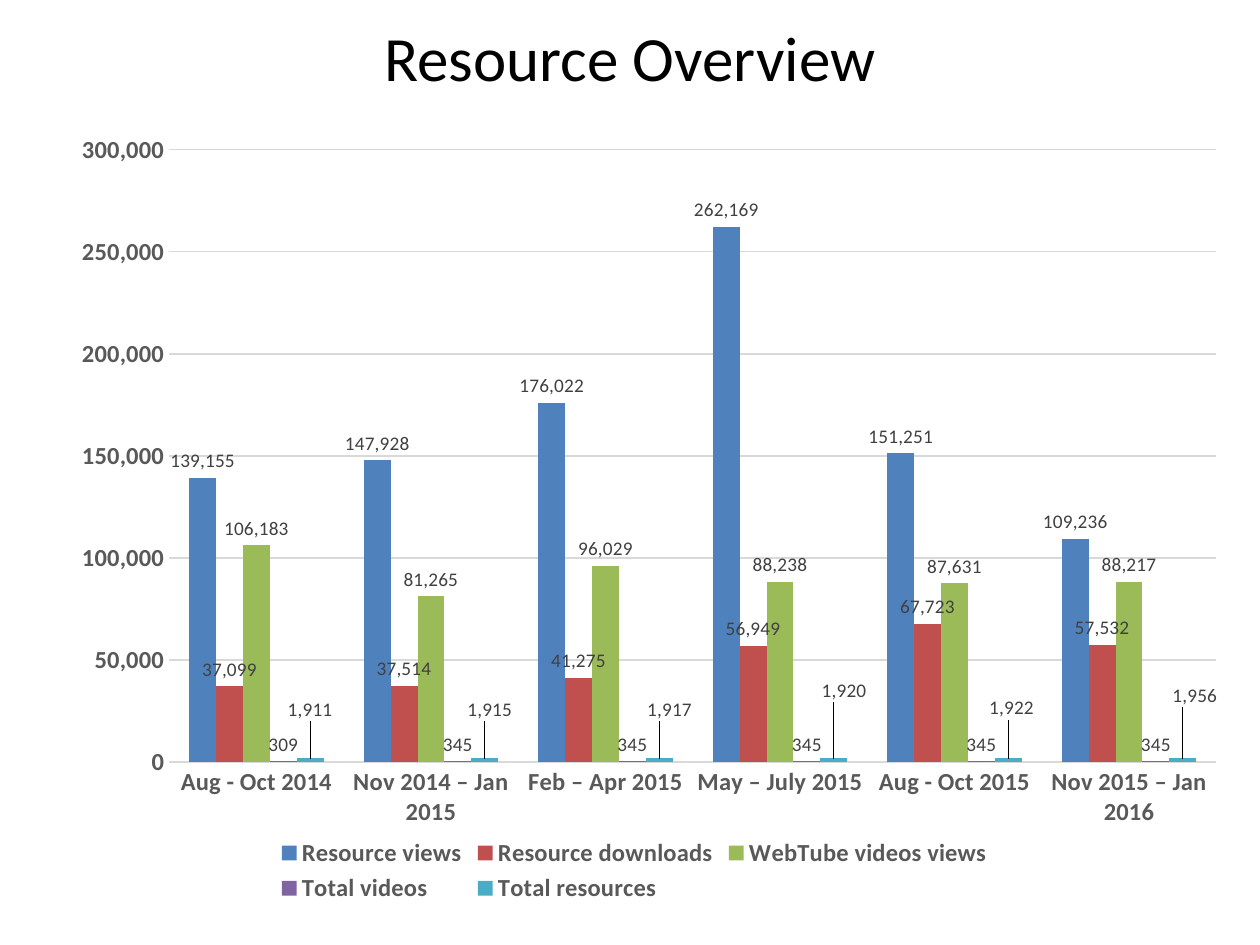
from lxml.etree import fromstring
from pptx import Presentation
from pptx.chart.data import CategoryChartData
from pptx.dml.color import RGBColor
from pptx.enum.chart import (XL_CHART_TYPE as ChartType, XL_LABEL_POSITION as LabelPos,
                             XL_LEGEND_POSITION as LegendPos, XL_TICK_MARK as Tick)
from pptx.enum.text import MSO_ANCHOR as Anchor, PP_ALIGN as Align
from pptx.oxml.ns import nsdecls, qn
from pptx.util import Pt

FONT = "Calibri"
THOUSANDS = "#,##0"
CHART_LEFT, CHART_TOP, CHART_WIDTH, CHART_HEIGHT = 25.2, 77, 674.6, 442.1
PERIODS = ["Aug - Oct 2014", "Nov 2014 – Jan 2015", "Feb – Apr 2015",
           "May – July 2015", "Aug - Oct 2015", "Nov 2015 – Jan 2016"]
MEASURES = [
    ("Resource views", "4F81BD", [139155, 147928, 176022, 262169, 151251, 109236]),
    ("Resource downloads", "C0504D", [37099, 37514, 41275, 56949, 67723, 57532]),
    ("WebTube videos views", "9BBB59", [106183, 81265, 96029, 88238, 87631, 88217]),
    ("Total videos", "8064A2", [309, 345, 345, 345, 345, 345]),
    ("Total resources", "4BACC6", [1911, 1915, 1917, 1920, 1922, 1956]),
]
# Shift of each "Total resources" label from its usual place, in points
TOTAL_SHIFTS = [(0, -18), (3, -18), (6, -18), (6, -29), (2, -19), (7, -26)]
AXIS_TEXT = {"size": Pt(14), "bold": True, "name": FONT}
LABEL_TEXT = {"size": Pt(11), "bold": False, "name": FONT}


def color(hex_code):
    return RGBColor.from_string(hex_code)


def apply(target, values):
    for name, value in values.items():
        setattr(target, name, value)


def style_font(font, values, hex_code):
    apply(font, values)
    font.color.rgb = color(hex_code)


def style_line(line, hex_code):
    line.color.rgb = color(hex_code)
    line.width = Pt(0.75)


def manual_layout(target="", **fractions):
    """Return a c:layout element; target is "inner" for a plot area."""
    parts = f'<c:layoutTarget val="{target}"/><c:xMode val="edge"/><c:yMode val="edge"/>' if target else ""
    parts += "".join(f'<c:{name} val="{value}"/>' for name, value in fractions.items())
    return fromstring(f'<c:layout {nsdecls("c")}><c:manualLayout>{parts}</c:manualLayout></c:layout>')


def add_title(slide, wording):
    title = slide.shapes.title
    apply(title, {"left": Pt(36), "top": Pt(10), "width": Pt(648), "height": Pt(44)})
    frame = title.text_frame
    frame.text = wording
    frame.vertical_anchor = Anchor.MIDDLE
    heading = frame.paragraphs[0]
    heading.alignment = Align.CENTER
    style_font(heading.runs[0].font, {"size": Pt(36), "name": FONT}, "000000")


def add_overview_chart(slide):
    figures = CategoryChartData(number_format=THOUSANDS)
    figures.categories = PERIODS
    for name, _, values in MEASURES:
        figures.add_series(name, values)
    chart = slide.shapes.add_chart(ChartType.COLUMN_CLUSTERED, Pt(CHART_LEFT), Pt(CHART_TOP),
                                   Pt(CHART_WIDTH), Pt(CHART_HEIGHT), figures).chart
    chart.has_title = False
    style_font(chart.font, LABEL_TEXT, "000000")
    apply(chart.plots[0], {"gap_width": 150, "overlap": 0, "vary_by_categories": False})
    return chart


def place_plot(chart):
    plot_area = chart.plots[0]._element.getparent()
    for old in plot_area.findall(qn("c:layout")):
        plot_area.remove(old)
    plot_area.insert(0, manual_layout("inner", x=0.106, y=0.019, w=0.887, h=0.792))


def style_axes(chart):
    for axis in (chart.category_axis, chart.value_axis):
        apply(axis, {"major_tick_mark": Tick.NONE, "minor_tick_mark": Tick.NONE})
        style_font(axis.tick_labels.font, AXIS_TEXT, "595959")
    style_line(chart.category_axis.format.line, "D9D9D9")
    counts = chart.value_axis
    apply(counts, {"minimum_scale": 0, "maximum_scale": 300000, "major_unit": 50000})
    counts.format.line.fill.background()
    style_line(counts.major_gridlines.format.line, "D9D9D9")
    apply(counts.tick_labels, {"number_format": THOUSANDS, "number_format_is_linked": False})


def add_legend(chart):
    chart.has_legend = True
    apply(chart.legend, {"position": LegendPos.BOTTOM, "include_in_layout": False})
    style_font(chart.legend.font, AXIS_TEXT, "595959")


def style_series(chart):
    for series, (_, hex_code, _) in zip(chart.plots[0].series, MEASURES):
        series.format.fill.solid()
        series.format.fill.fore_color.rgb = color(hex_code)
        series.invert_if_negative = False
        labels = series.data_labels
        apply(labels, {"show_value": True, "position": LabelPos.OUTSIDE_END,
                       "number_format": THOUSANDS, "number_format_is_linked": False})
        style_font(labels.font, LABEL_TEXT, "404040")


def shift_labels(series, shifts):
    for index in range(len(shifts)):
        label = series.points[index].data_label
        label.position = LabelPos.OUTSIDE_END
        style_font(label.font, LABEL_TEXT, "404040")
    elements = series.data_labels._element.findall(qn("c:dLbl"))
    for element, (right, down) in zip(elements, shifts):
        element.insert(1, manual_layout(x=right / CHART_WIDTH, y=down / CHART_HEIGHT))


def main():
    deck = Presentation()
    apply(deck, {"slide_width": Pt(720), "slide_height": Pt(540)})
    slide = deck.slides.add_slide(deck.slide_layouts[5])
    add_title(slide, "Resource Overview")
    chart = add_overview_chart(slide)
    place_plot(chart)
    style_axes(chart)
    add_legend(chart)
    style_series(chart)
    shift_labels(chart.plots[0].series[-1], TOTAL_SHIFTS)
    deck.save("out.pptx")


if __name__ == "__main__":
    main()
